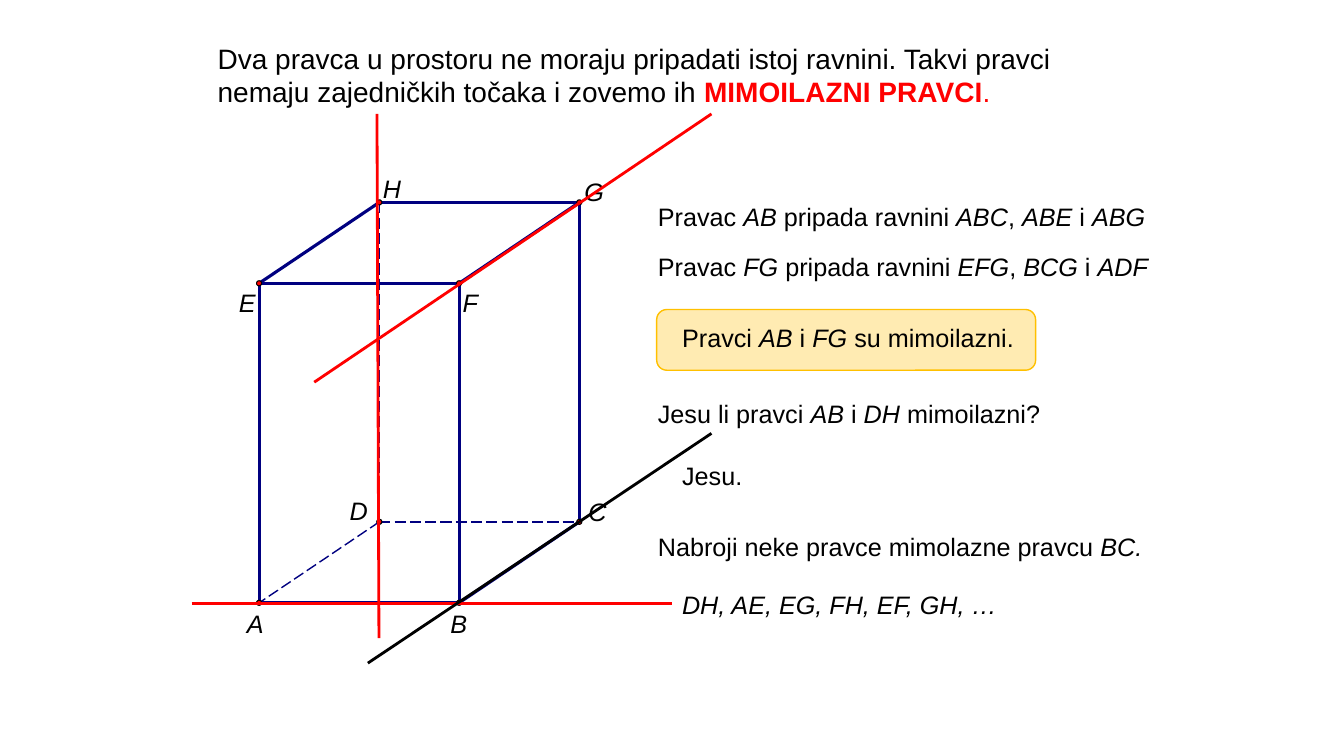
from lxml import etree
from pptx import Presentation
from pptx.dml.color import RGBColor
from pptx.enum.dml import MSO_LINE
from pptx.enum.shapes import MSO_CONNECTOR, MSO_SHAPE
from pptx.enum.text import MSO_ANCHOR, MSO_AUTO_SIZE, PP_ALIGN
from pptx.oxml.ns import qn
from pptx.util import Cm, Pt

STRAIGHT = MSO_CONNECTOR.STRAIGHT
LONG_DASH = MSO_LINE.LONG_DASH
OVAL, ROUNDED = MSO_SHAPE.OVAL, MSO_SHAPE.ROUNDED_RECTANGLE
TOP, LEFT = MSO_ANCHOR.TOP, PP_ALIGN.LEFT
NO_FIT, GROW = MSO_AUTO_SIZE.NONE, MSO_AUTO_SIZE.SHAPE_TO_FIT_TEXT
TITLE_ONLY = 5

COLORS = {"black": "000000", "red": "FF0000", "navy": "000080", "gold": "FFC000"}

FRONT_LEFT, FRONT_BOTTOM = 6.53, 15.19
WIDTH, HEIGHT = 5.04, 8.05
DEPTH_X, DEPTH_Y = 3.03, -2.04
CORNERS = {
    name: (FRONT_LEFT + right * WIDTH + back * DEPTH_X,
           FRONT_BOTTOM - up * HEIGHT + back * DEPTH_Y)
    for name, right, back, up in (
        ("A", 0, 0, 0), ("B", 1, 0, 0), ("C", 1, 1, 0), ("D", 0, 1, 0),
        ("E", 0, 0, 1), ("F", 1, 0, 1), ("G", 1, 1, 1), ("H", 0, 1, 1))
}
VISIBLE_EDGES = ("AB", "EA", "EF", "FB", "CB", "GF", "GC", "HG", "HE")
HIDDEN_EDGES = ("DA", "DC", "HD")
LABELS = {
    "A": (6.22, 15.32), "B": (11.35, 15.32), "C": (14.83, 12.5), "D": (8.81, 12.47),
    "E": (6.02, 7.24), "F": (11.66, 7.24), "G": (14.73, 4.45), "H": (9.65, 4.37),
}
LINES = (
    ((4.83, 15.21), (16.94, 15.21), "red"),
    ((7.92, 9.63), (17.93, 2.87), "red"),
    ((9.5, 2.87), (9.55, 16.08), "red"),
    ((9.27, 16.71), (17.93, 10.92), "black"),
)
STATEMENTS = (
    (16.33, 4.95, 13.31, "Pravac _AB_ pripada ravnini _ABC_, _ABE_ i _ABG_"),
    (16.33, 6.2, 13.31, "Pravac _FG_ pripada ravnini _EFG_, _BCG_ i _ADF_"),
    (16.94, 8.01, 8.99, "Pravci _AB_ i _FG_ su mimoilazni."),
    (16.33, 9.92, 10.59, "Jesu li pravci _AB_ i _DH_ mimoilazni?"),
    (16.94, 11.47, 2.06, "Jesu."),
    (16.33, 13.26, 13.31, "Nabroji neke pravce mimolazne pravcu _BC._"),
    (16.94, 14.73, 10.01, "_DH, AE, EG, FH, EF, GH, …_"),
)


def rgb(name):
    """Return the named colour."""
    return RGBColor.from_string(COLORS[name])


def add_span(para, text, size=18, color="black", bold=False, italic=False):
    """Append one formatted span to a paragraph."""
    span = para.add_run()
    span.text = text
    font = span.font
    font.name, font.size = "Arial", Pt(size)
    font.bold, font.italic = bold, italic
    font.color.rgb = rgb(color)


class GeometryPage:
    """Holds the current slide and the style of its elements."""

    def __init__(self, page):
        """Draw on the given slide."""
        self.page = page
        self.shapes = page.shapes

    def title(self, left, top, width, height, spans):
        """Move the title placeholder and fill it with formatted spans."""
        box = self.page.shapes.title
        box.left, box.top, box.width, box.height = map(Cm, (left, top, width, height))
        frame = box.text_frame
        frame.word_wrap, frame.auto_size = True, NO_FIT
        frame.vertical_anchor = TOP
        para = frame.paragraphs[0]
        para.alignment = LEFT
        for text, style in spans:
            add_span(para, text, size=20, **style)

    def text(self, left, top, width, marked, height=1.02, wrap=True, margin=None):
        """Add a text box where underscores enclose italic words."""
        box = self.shapes.add_textbox(Cm(left), Cm(top), Cm(width), Cm(height))
        frame = box.text_frame
        frame.word_wrap, frame.auto_size = wrap, GROW
        if margin is not None:
            frame.margin_left = frame.margin_right = Cm(margin)
            frame.margin_top = frame.margin_bottom = Cm(margin)
        for index, part in enumerate(marked.split("_")):
            if part:
                add_span(frame.paragraphs[0], part, italic=index % 2 == 1)

    def line(self, start, end, color, width, dash=None):
        """Add a straight line between two points."""
        line = self.shapes.add_connector(STRAIGHT, *map(Cm, (*start, *end)))
        line.line.color.rgb = rgb(color)
        line.line.width = Pt(width)
        if dash:
            line.line.dash_style = dash
        etree.SubElement(line._element.spPr, qn("a:effectLst"))

    def shape(self, kind, left, top, width, height, fill, outline, weight, opacity=100):
        """Add a filled and outlined preset shape."""
        shape = self.shapes.add_shape(kind, *map(Cm, (left, top, width, height)))
        shape.shadow.inherit = False
        shape.fill.solid()
        shape.fill.fore_color.rgb = rgb(fill)
        shape.line.color.rgb = rgb(outline)
        shape.line.width = Pt(weight)
        if opacity < 100:
            color = shape._element.spPr.find(qn("a:solidFill"))[0]
            etree.SubElement(color, qn("a:alpha"), val=str(opacity * 1000))

    def prism(self):
        """Add the grouped prism with its edges, corners and labels."""
        self.shapes = self.page.shapes.add_group_shape().shapes
        for start, end in VISIBLE_EDGES:
            self.line(CORNERS[start], CORNERS[end], "navy", 2.25)
        for start, end in HIDDEN_EDGES:
            self.line(CORNERS[start], CORNERS[end], "navy", 1, LONG_DASH)
        dot = 0.13
        for name, (x, y) in CORNERS.items():
            self.shape(OVAL, x - dot / 2, y - dot / 2, dot, dot, "red", "black", 0)
            self.text(*LABELS[name], 0.45, f"_{name}_", height=0.76, wrap=False, margin=0)
        self.shapes = self.page.shapes


def main():
    """Build the slide about skew lines."""
    deck = Presentation()
    deck.slide_width, deck.slide_height = Cm(33.87), Cm(19.05)
    page = GeometryPage(deck.slides.add_slide(deck.slide_layouts[TITLE_ONLY]))
    page.shape(ROUNDED, 16.55, 7.8, 9.55, 1.53, "gold", "gold", 1, opacity=30)
    page.title(5.23, 0.91, 22.3, 1.96, (
        ("Dva pravca u prostoru ne moraju pripadati istoj ravnini. Takvi pravci "
         "nemaju zajedničkih točaka i zovemo ih ", {}),
        ("MIMOILAZNI PRAVCI", {"color": "red", "bold": True}),
        (".", {"color": "red"}),
    ))
    page.prism()
    for start, end, color in LINES:
        page.line(start, end, color, 2)
    for left, top, width, marked in STATEMENTS:
        page.text(left, top, width, marked)
    deck.save("out.pptx")


if __name__ == "__main__":
    main()
